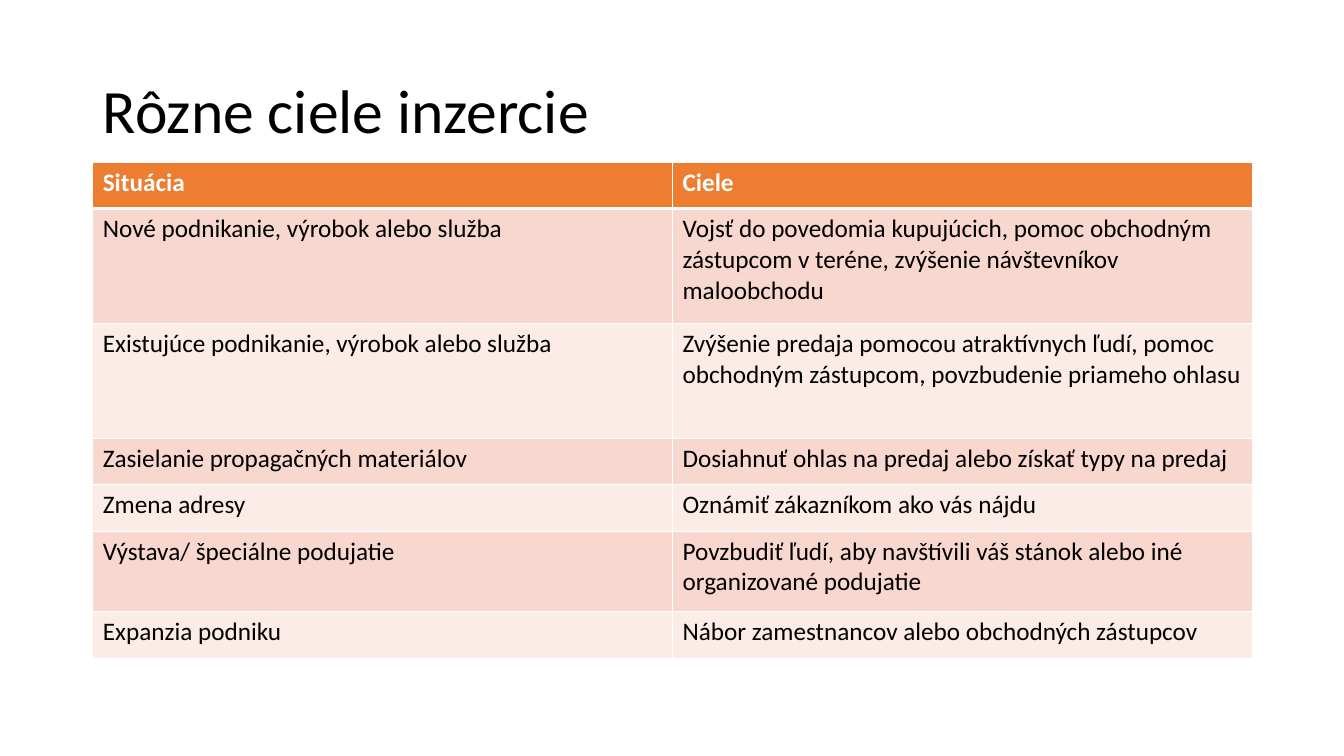
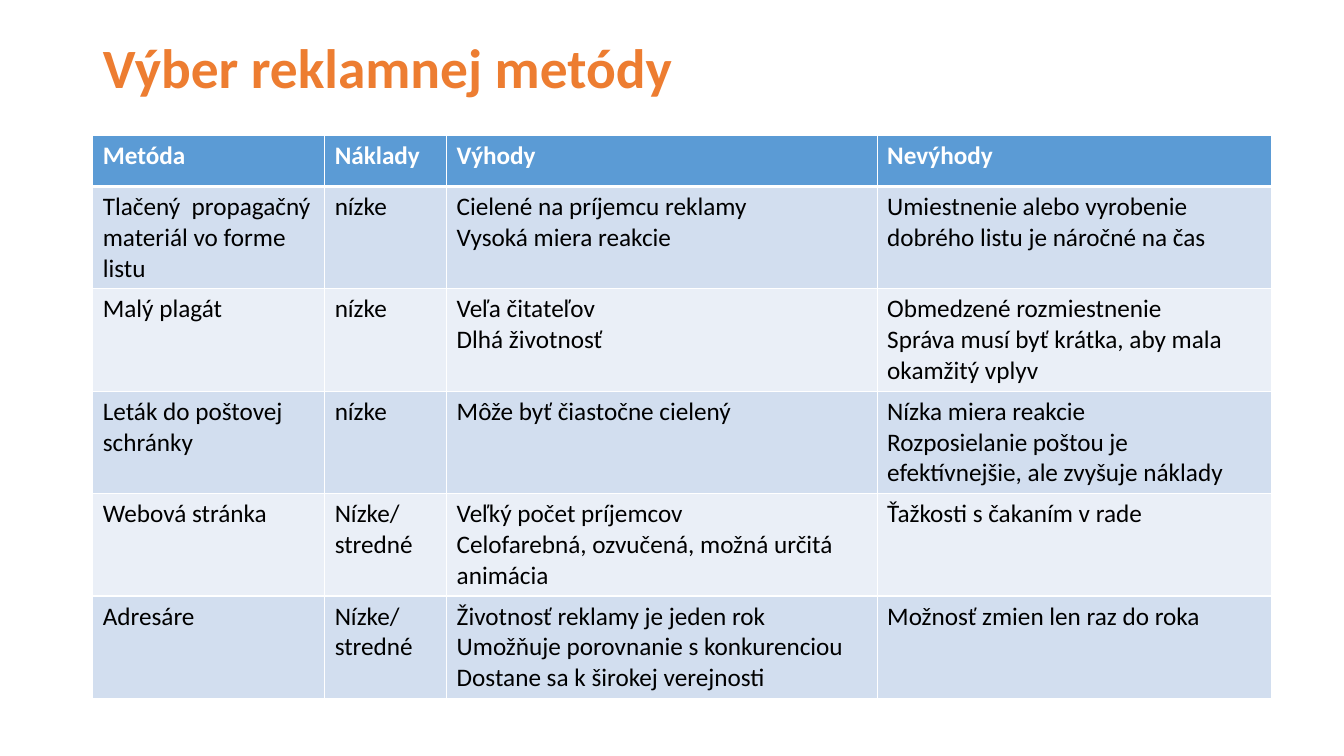
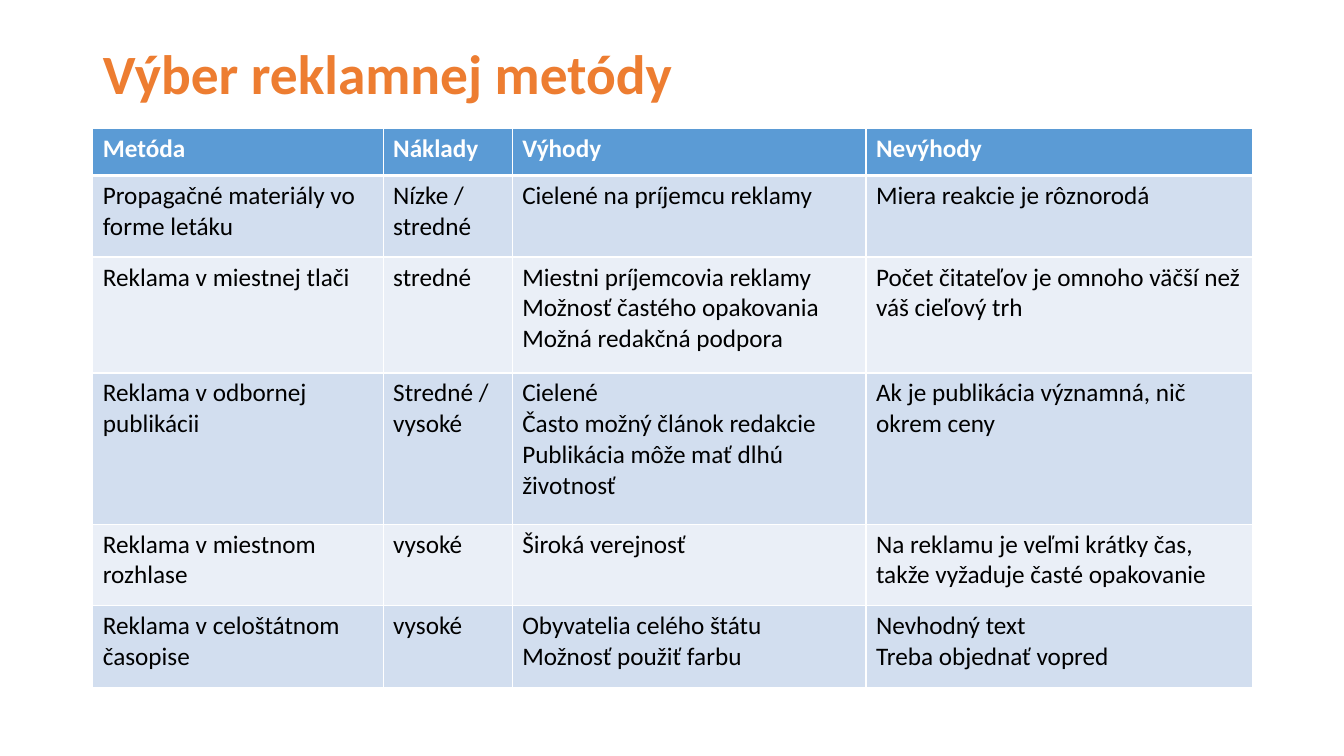
import pptx
import pptx.util
import pptx.dml.color
import pptx.enum.text
import pptx.oxml
import pptx.oxml.ns

PX = 9144  # 100 px to the inch
LEFT, TOP, WIDE = 92, 40, 1150
FONT = "Calibri"
WHITE, BLACK, ORANGE = "FFFFFF", "000000", "ED7D31"
WARM = (ORANGE, "F8D7CE", "FCECE8")
COOL = ("5B9BD5", "D2DEEF", "EAEFF7")
PLAIN = dict(size=44, color=BLACK, bold=False)
BOLD = dict(size=39.6, color=ORANGE, bold=True)
METHOD = ("Metóda", "Náklady", "Výhody", "Nevýhody")

# A line break inside a cell's text starts a new paragraph.
SLIDES = [
    dict(
        title="Rôzne ciele inzercie", style=PLAIN, tall=145,
        top=161, tones=WARM, cols=[575, 575],
        heights=[46, 114, 114, 46, 46, 80, 46],
        rows=[
            ("Situácia", "Ciele"),
            ("Nové podnikanie, výrobok alebo služba",
             "Vojsť do povedomia kupujúcich, pomoc obchodným zástupcom v teréne, "
             "zvýšenie návštevníkov maloobchodu"),
            ("Existujúce podnikanie, výrobok alebo služba",
             "Zvýšenie predaja pomocou atraktívnych ľudí, pomoc obchodným "
             "zástupcom, povzbudenie priameho ohlasu"),
            ("Zasielanie propagačných materiálov",
             "Dosiahnuť ohlas na predaj alebo získať typy na predaj"),
            ("Zmena adresy", "Oznámiť zákazníkom ako vás nájdu"),
            ("Výstava/ špeciálne podujatie",
             "Povzbudiť ľudí, aby navštívili váš stánok alebo iné "
             "organizované podujatie"),
            ("Expanzia podniku",
             "Nábor zamestnancov alebo obchodných zástupcov"),
        ]),
    dict(
        title="Výber reklamnej metódy", style=BOLD, tall=60,
        top=134, tones=COOL, cols=[230, 121, 427, 391],
        heights=[51] + [101] * 5,
        rows=[
            METHOD,
            ("Tlačený  propagačný materiál vo forme listu", "nízke",
             "Cielené na príjemcu reklamy\nVysoká miera reakcie",
             "Umiestnenie alebo vyrobenie dobrého listu je náročné na čas"),
            ("Malý plagát", "nízke",
             "Veľa čitateľov\nDlhá životnosť",
             "Obmedzené rozmiestnenie\n"
             "Správa musí byť krátka, aby mala okamžitý vplyv"),
            ("Leták do poštovej schránky", "nízke",
             "Môže byť čiastočne cielený",
             "Nízka miera reakcie\n"
             "Rozposielanie poštou je efektívnejšie, ale zvyšuje náklady"),
            ("Webová stránka", "Nízke/ stredné",
             "Veľký počet príjemcov\n"
             "Celofarebná, ozvučená, možná určitá animácia",
             "Ťažkosti s čakaním v rade"),
            ("Adresáre", "Nízke/ stredné",
             "Životnosť reklamy je jeden rok\n"
             "Umožňuje porovnanie s konkurenciou\n"
             "Dostane sa k širokej verejnosti",
             "Možnosť zmien len raz do roka"),
        ]),
    dict(
        title="Výber reklamnej metódy", style=BOLD, tall=71,
        top=127, tones=COOL, cols=[288, 128, 351, 383],
        heights=[47, 81, 115, 150, 81, 81],
        rows=[
            METHOD,
            ("Propagačné materiály vo forme letáku", "Nízke / stredné",
             "Cielené na príjemcu reklamy", "Miera reakcie je rôznorodá"),
            ("Reklama v miestnej tlači", "stredné",
             "Miestni príjemcovia reklamy\nMožnosť častého opakovania\n"
             "Možná redakčná podpora",
             "Počet čitateľov je omnoho väčší než váš cieľový trh"),
            ("Reklama v odbornej publikácii", "Stredné / vysoké",
             "Cielené\nČasto možný článok redakcie\n"
             "Publikácia môže mať dlhú životnosť",
             "Ak je publikácia významná, nič okrem ceny"),
            ("Reklama v miestnom rozhlase", "vysoké", "Široká verejnosť",
             "Na reklamu je veľmi krátky čas, takže vyžaduje časté opakovanie"),
            ("Reklama v celoštátnom časopise", "vysoké",
             "Obyvatelia celého štátu\nMožnosť použiť farbu",
             "Nevhodný text\nTreba objednať vopred"),
        ]),
]


def tint(code):
    return pptx.dml.color.RGBColor.from_string(code)


def write(para, text, size, color, bold):
    run = para.add_run()
    run.text = text
    run.font.name = FONT
    run.font.size = pptx.util.Pt(size)
    run.font.bold = bold
    run.font.color.rgb = tint(color)


def edge(cell, row):
    """Give a cell white borders, with a thick rule below the header row."""
    props = cell._tc.get_or_add_tcPr()
    widths = dict(L=1, R=1, T=3 if row == 1 else 1, B=3 if row == 0 else 1)
    for spot, (side, width) in enumerate(widths.items()):
        props.insert(spot, pptx.oxml.parse_xml(
            f'<a:ln{side} {pptx.oxml.ns.nsdecls("a")} w="{width * 12700}">'
            f'<a:solidFill><a:srgbClr val="{WHITE}"/></a:solidFill>'
            f'</a:ln{side}>'))


def head(slide, page):
    title = slide.shapes.title
    title.left, title.top = LEFT * PX, TOP * PX
    title.width, title.height = WIDE * PX, page["tall"] * PX
    frame = title.text_frame
    frame.word_wrap = True
    frame.auto_size = pptx.enum.text.MSO_AUTO_SIZE.NONE
    frame.vertical_anchor = pptx.enum.text.MSO_ANCHOR.MIDDLE
    para = frame.paragraphs[0]
    para.alignment = pptx.enum.text.PP_ALIGN.LEFT
    para.line_spacing = 0.9
    write(para, page["title"], **page["style"])


def grid(slide, page):
    rows, cols, heights = page["rows"], page["cols"], page["heights"]
    table = slide.shapes.add_table(
        len(rows), len(cols), LEFT * PX, page["top"] * PX,
        sum(cols) * PX, sum(heights) * PX).table
    for col, width in zip(table.columns, cols):
        col.width = width * PX
    for r, (texts, height) in enumerate(zip(rows, heights)):
        table.rows[r].height = height * PX
        first = r == 0
        tone = page["tones"][0 if first else 2 - r % 2]
        for c, text in enumerate(texts):
            cell = table.cell(r, c)
            cell.fill.solid()
            cell.fill.fore_color.rgb = tint(tone)
            edge(cell, r)
            frame = cell.text_frame
            for n, line in enumerate(text.split("\n")):
                para = frame.add_paragraph() if n else frame.paragraphs[0]
                write(para, line, 18, WHITE if first else BLACK, first)


def main():
    deck = pptx.Presentation()
    deck.slide_width, deck.slide_height = 1333 * PX, 750 * PX
    for page in SLIDES:
        slide = deck.slides.add_slide(deck.slide_layouts[5])
        head(slide, page)
        grid(slide, page)
    deck.save("out.pptx")


if __name__ == "__main__":
    main()
